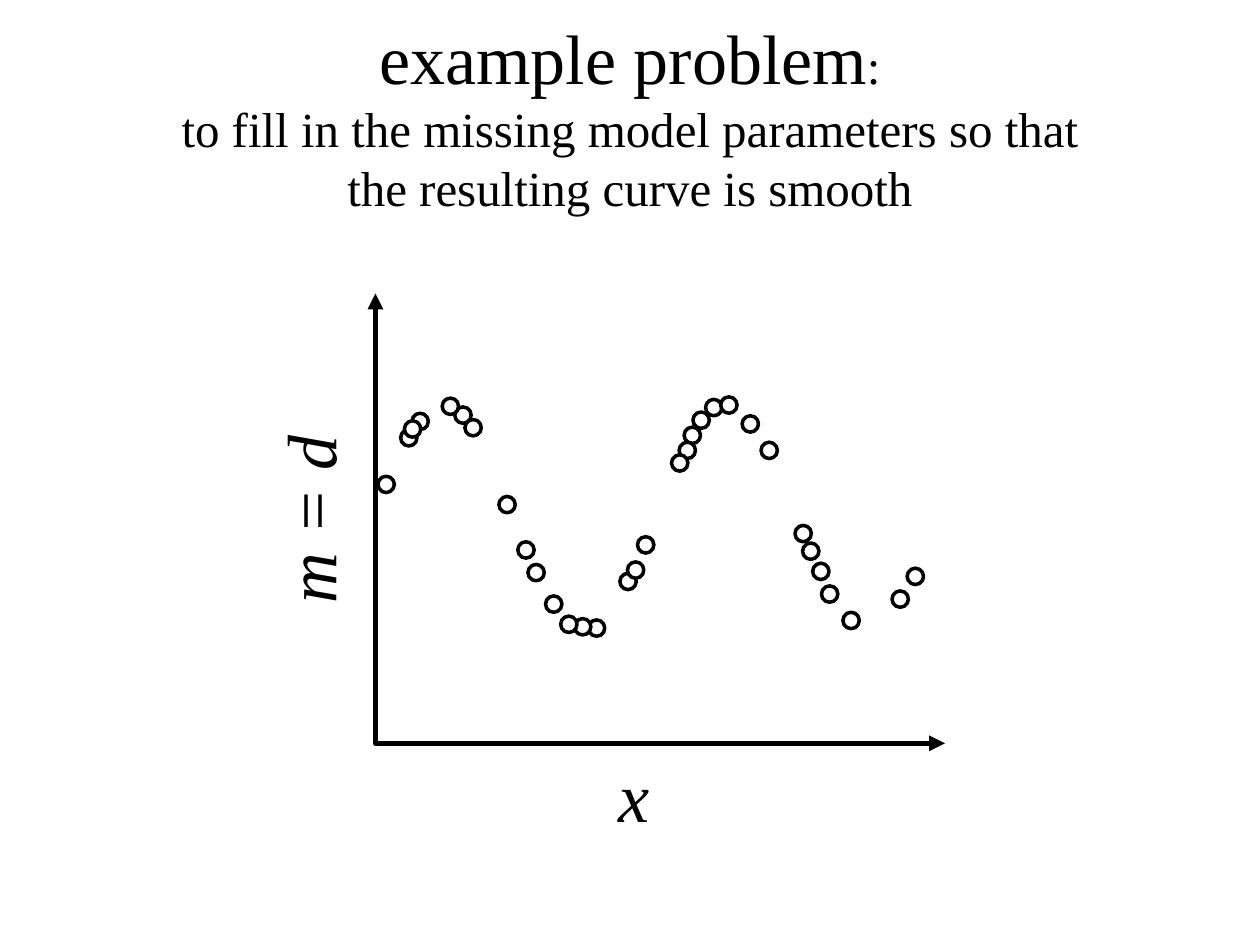
import pptx
import pptx.util
import pptx.dml.color
import pptx.enum.shapes
import pptx.enum.text
import lxml.etree

# Grid: 100 columns by 75 rows on a 10 x 7.5 inch slide
CELL = 0.1
COLUMNS, ROWS = 100, 75
INK, PAPER = "000000", "FFFFFF"
FONT = "Times New Roman"
DOT_SIZE = 1.3
ORIGIN = (29.8, 59)
AXIS_TOP, AXIS_RIGHT = 23.3, 75

# Left and top of each data point, from back to front
DATA_POINTS = [
    (30, 37.8), (55, 32.7), (39.6, 39.4), (36.1, 32.3), (31.8, 34.1),
    (36.9, 33.3), (35.1, 31.6), (32.7, 32.8), (49.2, 45.5), (46.7, 49.2),
    (45.6, 49.1), (43.3, 47.3), (44.5, 48.9), (41.9, 44.8), (41.1, 43),
    (66.9, 48.6), (65.2, 46.5), (54.3, 33.9), (53.9, 35.1), (53.3, 36.1),
    (50.6, 42.6), (56, 31.7), (72, 45.1), (70.8, 46.9), (32.1, 33.4),
    (64.5, 44.7), (63.7, 43.1), (63.1, 41.7), (60.4, 35.1), (58.9, 33),
    (57.2, 31.5), (49.8, 44.6),
]


def grid(cells):
    return pptx.util.Inches(cells * CELL)


def color(hex_code):
    return pptx.dml.color.RGBColor.from_string(hex_code)


def set_values(target, values):
    for name, value in values.items():
        setattr(target, name, value)


def draw_outline(shape, width):
    shape.shadow.inherit = False
    shape.line.color.rgb = color(INK)
    shape.line.width = pptx.util.Pt(width)


def add_text(slide, box, paragraphs, frame_format, align, italic=False, rotation=0):
    """Each paragraph is a list of (wording, size) runs."""
    label = slide.shapes.add_textbox(*map(grid, box))
    label.rotation = rotation
    frame = label.text_frame
    set_values(frame, {"word_wrap": True, **frame_format})
    for index, runs in enumerate(paragraphs):
        paragraph = frame.add_paragraph() if index else frame.paragraphs[0]
        paragraph.alignment = align
        for wording, size in runs:
            run = paragraph.add_run()
            run.text = wording
            set_values(run.font, {"name": FONT, "size": pptx.util.Pt(size), "italic": italic})
            run.font.color.rgb = color(INK)


def add_axes(slide):
    x, y = ORIGIN
    outline = slide.shapes.build_freeform(grid(x), grid(AXIS_TOP))
    outline.add_line_segments([(grid(x), grid(y)), (grid(AXIS_RIGHT), grid(y))], close=False)
    axes = outline.convert_to_shape()
    axes.fill.background()
    draw_outline(axes, 3)
    line = axes.line._get_or_add_ln()
    namespace = pptx.oxml.ns.nsdecls("a")
    for tag in ('round', 'headEnd type="triangle"', 'tailEnd type="triangle"'):
        line.append(lxml.etree.fromstring(f"<a:{tag} {namespace}/>"))


def add_data_point(slide, left, top):
    dot = slide.shapes.add_shape(pptx.enum.shapes.MSO_SHAPE.OVAL,
                                 *map(grid, (left, top, DOT_SIZE, DOT_SIZE)))
    dot.fill.solid()
    dot.fill.fore_color.rgb = color(PAPER)
    draw_outline(dot, 2)


def main():
    deck = pptx.Presentation()
    set_values(deck, {"slide_width": grid(COLUMNS), "slide_height": grid(ROWS)})
    slide = deck.slides.add_slide(deck.slide_layouts[6])
    align = pptx.enum.text.PP_ALIGN
    label_format = {"auto_size": pptx.enum.text.MSO_AUTO_SIZE.SHAPE_TO_FIT_TEXT}
    title_format = {"vertical_anchor": pptx.enum.text.MSO_ANCHOR.MIDDLE}

    # Axis labels
    add_text(slide, (48.1, 59.2, 6.5, 7.7), [[("x", 40)]], label_format, align.LEFT, italic=True)
    add_text(slide, (6.6, 37.4, 35.8, 7.7), [[("m = d", 40)]], label_format, align.CENTER,
             italic=True, rotation=270)

    # Plot
    add_axes(slide)
    for left, top in DATA_POINTS:
        add_data_point(slide, left, top)

    # Title
    add_text(slide, (0, 0, COLUMNS, 18.3), [
        [("example problem", 40), (":", 28)],
        [("to fill in the missing model parameters so that", 28)],
        [("the resulting curve is smooth", 28)],
    ], title_format, align.CENTER)

    deck.save("out.pptx")


if __name__ == "__main__":
    main()
